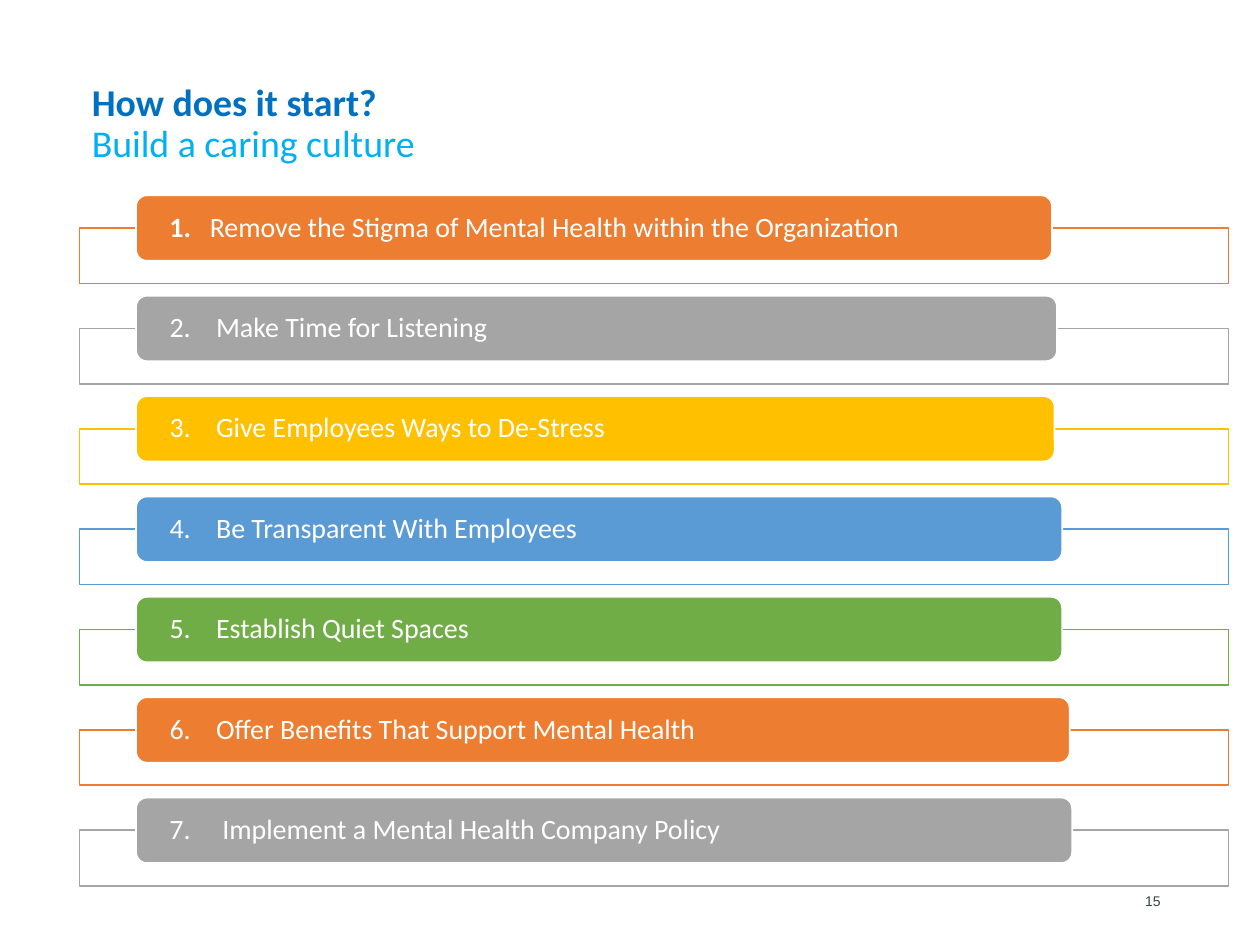
"""Builds the slide listing seven steps towards a caring workplace culture."""
from typing import NamedTuple

from lxml import etree
from pptx import Presentation
from pptx.dml.color import RGBColor
from pptx.enum import shapes, text
from pptx.oxml import ns
from pptx.util import Inches, Pt

WHITE = RGBColor(0xFF, 0xFF, 0xFF)
ORANGE = RGBColor(0xED, 0x7D, 0x31)
GREY = RGBColor(0xA5, 0xA5, 0xA5)
GOLD = RGBColor(0xFF, 0xC0, 0x00)
BLUE = RGBColor(0x5B, 0x9B, 0xD5)
GREEN = RGBColor(0x70, 0xAD, 0x47)
DEEP_BLUE = RGBColor(0x00, 0x70, 0xC0)
SKY_BLUE = RGBColor(0x00, 0xB0, 0xF0)
SLATE = RGBColor(0x37, 0x42, 0x4A)

FIRST_TOP, LAST_TOP = 1.55, 6.33
BAR_LEFT, BAR_HEIGHT = 1.08, 0.52
FRAME_LEFT, FRAME_WIDTH, FRAME_HEIGHT = 0.63, 9.12, 0.44


class Step(NamedTuple):
    wording: str
    color: RGBColor
    width: float
    indent: float = 0.37
    bold_number: bool = False


STEPS = [
    Step("Remove the Stigma of Mental Health within the Organization", ORANGE, 7.27, 0.32, True),
    Step("Make Time for Listening", GREY, 7.31),
    Step("Give\u00a0Employees\u00a0Ways to De-Stress".replace("\u00a0", " "), GOLD, 7.29),
    Step("Be Transparent With Employees", BLUE, 7.35),
    Step("Establish Quiet Spaces", GREEN, 7.35),
    Step("Offer Benefits That Support Mental Health", ORANGE, 7.41),
    Step("Implement a Mental Health Company Policy", GREY, 7.43, 0.42),
]


def add_run(paragraph, wording: str, size: float, color: RGBColor,
            bold: bool = False, font: str = "Calibri") -> None:
    """Append one formatted run to a paragraph."""
    run = paragraph.add_run()
    run.text = wording
    run.font.name, run.font.size, run.font.bold = font, Pt(size), bold
    run.font.color.rgb = color


def add_panel(slide, preset, left: float, top: float, width: float, height: float,
              fill: RGBColor, line: RGBColor):
    """Draw a filled and outlined shape without a shadow."""
    panel = slide.shapes.add_shape(preset, Inches(left), Inches(top), Inches(width), Inches(height))
    panel.shadow.inherit = False
    panel.fill.solid()
    panel.fill.fore_color.rgb = fill
    panel.line.color.rgb = line
    panel.line.width = Pt(1)
    return panel


def add_step(slide, number: int, step: Step, top: float) -> None:
    """Draw the outlined frame and the numbered bar of one step."""
    frame = add_panel(slide, shapes.MSO_SHAPE.RECTANGLE, FRAME_LEFT, top + BAR_HEIGHT / 2,
                      FRAME_WIDTH, FRAME_HEIGHT, WHITE, step.color)
    frame_fill = frame._element.spPr.find(ns.qn("a:solidFill"))
    etree.SubElement(frame_fill[0], ns.qn("a:alpha"), val="90000")

    bar = add_panel(slide, shapes.MSO_SHAPE.ROUNDED_RECTANGLE, BAR_LEFT, top,
                    step.width, BAR_HEIGHT, step.color, WHITE)
    label = bar.text_frame
    label.word_wrap = True
    label.vertical_anchor = text.MSO_ANCHOR.MIDDLE
    label.margin_left = label.margin_right = Inches(0.24)
    label.margin_top = label.margin_bottom = 0
    paragraph = label.paragraphs[0]
    paragraph.alignment = text.PP_ALIGN.LEFT
    paragraph.line_spacing = 0.9
    hanging = Inches(step.indent)
    properties = paragraph._p.get_or_add_pPr()
    properties.set("marL", str(hanging))
    properties.set("indent", str(-hanging))
    add_run(paragraph, f"{number}.\t", 16, WHITE, step.bold_number)
    add_run(paragraph, step.wording, 16, WHITE)


def add_text_frame(slide, left: float, top: float, width: float, height: float):
    """Add a wrapping text box and return its text frame."""
    box = slide.shapes.add_textbox(Inches(left), Inches(top), Inches(width), Inches(height))
    box.text_frame.word_wrap = True
    return box.text_frame


def main() -> None:
    """Build and save the slide."""
    deck = Presentation()
    deck.slide_width, deck.slide_height = Inches(10), Inches(7.5)
    slide = deck.slides.add_slide(deck.slide_layouts[6])

    heading = add_text_frame(slide, 0.63, 0.62, 6.82, 0.76).paragraphs[0]
    heading.line_spacing = 0.9
    add_run(heading, "How does it start?", 21.6, DEEP_BLUE, bold=True)
    heading.add_line_break()
    add_run(heading, "Build a caring culture", 21.6, SKY_BLUE)

    page_number = add_text_frame(slide, 7.06, 6.95, 2.25, 0.4)
    page_number.vertical_anchor = text.MSO_ANCHOR.MIDDLE
    page_number.paragraphs[0].alignment = text.PP_ALIGN.RIGHT
    add_run(page_number.paragraphs[0], "15", 8, SLATE, font="Arial")

    pitch = (LAST_TOP - FIRST_TOP) / (len(STEPS) - 1)
    for index, step in enumerate(STEPS):
        add_step(slide, index + 1, step, FIRST_TOP + index * pitch)

    deck.save("out.pptx")


if __name__ == "__main__":
    main()
